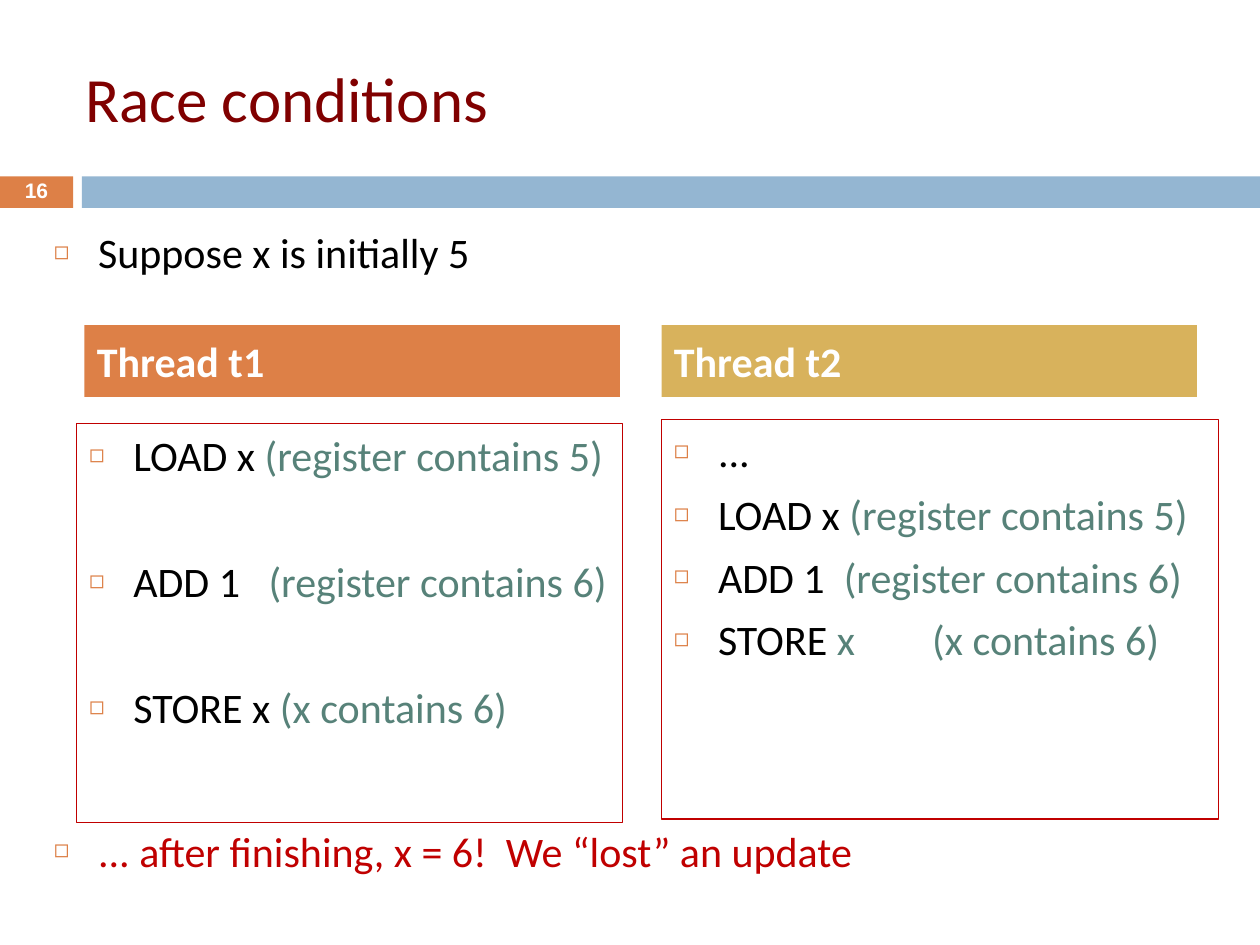
"""Build the slide on race conditions between two threads."""
from lxml import etree
from pptx import Presentation
from pptx.dml.color import RGBColor
from pptx.enum.shapes import MSO_SHAPE
from pptx.enum.text import MSO_ANCHOR, PP_ALIGN
from pptx.oxml.ns import qn
from pptx.util import Inches, Pt

RECTANGLE = MSO_SHAPE.RECTANGLE
TOP, MIDDLE = MSO_ANCHOR.TOP, MSO_ANCHOR.MIDDLE
LEFT, CENTER = PP_ALIGN.LEFT, PP_ALIGN.CENTER
COLORS = {
    "orange": "DD8047", "blue": "94B6D2", "gold": "D8B25C", "maroon": "800000",
    "red": "C00000", "green": "578279", "black": "000000", "white": "FFFFFF",
}
LINE_GAP = 7
SKIPPED_LINE = 36.3


def add_block(box, fill=None, line=None, anchor=TOP):
    """Add a rectangle with the given fill and outline, ready for text."""
    block = slide.shapes.add_shape(RECTANGLE, *map(Inches, box))
    block.shadow.inherit = False
    for part, color in ((block.fill, fill), (block.line.fill, line)):
        if color:
            part.solid()
            part.fore_color.rgb = RGBColor.from_string(COLORS[color])
        else:
            part.background()
    if line:
        block.line.width = Pt(0.75)
    block.text_frame.word_wrap = True
    block.text_frame.vertical_anchor = anchor
    return block.text_frame


def write(frame, runs, size=24, font="Calibri", bold=False, align=LEFT,
          bullet=False, before=LINE_GAP, tab=None):
    """Write (text, color) runs as the next paragraph of a frame."""
    first = frame.paragraphs[0]
    paragraph = frame.add_paragraph() if first.runs else first
    paragraph.alignment = align
    paragraph.space_before = Pt(before)
    for text, color in runs:
        run = paragraph.add_run()
        run.text = text
        run.font.size = Pt(size)
        run.font.name = font
        run.font.bold = bold
        run.font.color.rgb = RGBColor.from_string(COLORS[color])
    properties = paragraph._p.get_or_add_pPr()
    if bullet:
        properties.set("marL", str(Inches(0.35)))
        properties.set("indent", str(Inches(-0.35)))
        bullet_color = etree.SubElement(properties, qn("a:buClr"))
        etree.SubElement(bullet_color, qn("a:srgbClr"), val=COLORS["orange"])
        etree.SubElement(properties, qn("a:buSzPct"), val="60000")
        etree.SubElement(properties, qn("a:buFont"), typeface="Calibri")
        etree.SubElement(properties, qn("a:buChar"), char="◻")
    if tab:
        stops = etree.SubElement(properties, qn("a:tabLst"))
        etree.SubElement(stops, qn("a:tab"), pos=str(Inches(tab)), algn="l")
    return paragraph


prs = Presentation()
prs.slide_width, prs.slide_height = Inches(10), Inches(7.5)
slide = prs.slides.add_slide(prs.slide_layouts[6])

add_block((0, 1.4, 0.58, 0.25), fill="orange")
add_block((0.65, 1.4, 9.35, 0.25), fill="blue")

title = add_block((0.58, 0.3, 8.92, 0.95), anchor=MIDDLE)
write(title, [("Race conditions", "maroon")], size=36, before=0)

page_number = add_block((0, 1.39, 0.58, 0.27), anchor=MIDDLE)
number_line = write(page_number, [("16", "white")], size=12, font="Arial",
                    bold=True, align=CENTER, before=0)
number_line.line_spacing = 0.8

threads = [
    ("Thread t1", "orange", 0.67, (0.61, 3.36, 4.33, 3.17), LINE_GAP + SKIPPED_LINE, [
        [("LOAD x ", "black"), ("(register contains 5)", "green")],
        [("ADD 1   ", "black"), ("(register contains 6)", "green")],
        [("STORE x ", "black"), ("(x contains 6)", "green")],
    ]),
    ("Thread t2", "gold", 5.25, (5.25, 3.33, 4.42, 3.17), LINE_GAP, [
        [("...", "black")],
        [("LOAD x ", "black"), ("(register contains 5)", "green")],
        [("ADD 1  ", "black"), ("(register contains 6)", "green")],
        [("STORE ", "black"), ("x\t(x contains 6)", "green")],
    ]),
]
for name, color, left, steps_box, gap, steps in threads:
    heading = add_block((left, 2.58, 4.25, 0.57), fill=color, anchor=MIDDLE)
    write(heading, [(name, "white")], bold=True)
    steps_frame = add_block(steps_box, line="red")
    for index, step in enumerate(steps):
        has_tab = any("\t" in text for text, _ in step)
        write(steps_frame, step, bullet=True, before=gap if index else LINE_GAP,
              tab=2.05 if has_tab else None)

statements = [
    (1.75, "Suppose x is initially 5", "black"),
    (6.5, "... after finishing, x = 6!  We “lost” an update", "red"),
]
for top, statement, color in statements:
    statement_frame = add_block((0.33, top, 9.33, 0.67))
    write(statement_frame, [(statement, color)], bullet=True)

prs.save("out.pptx")
